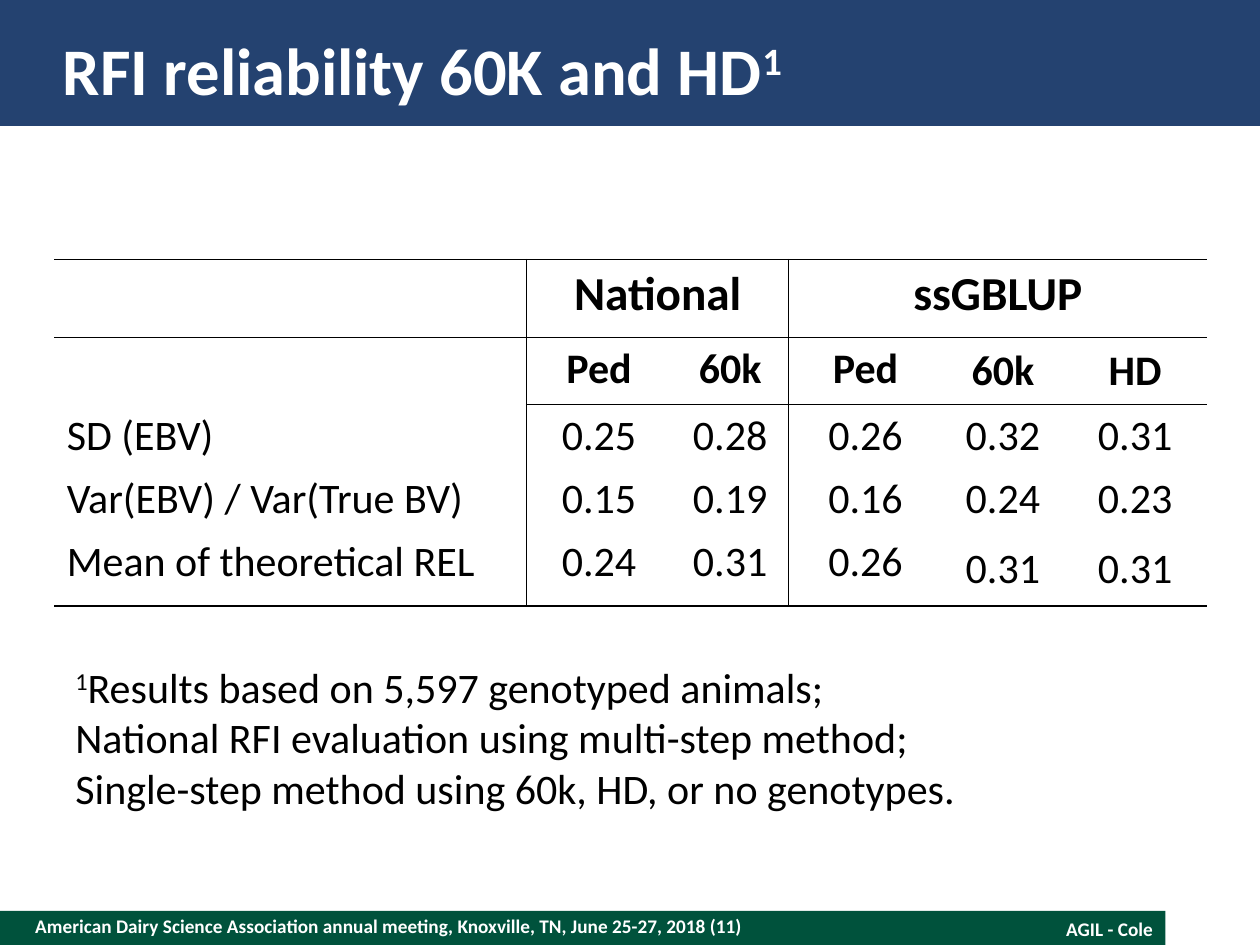
from dataclasses import dataclass

from lxml.etree import SubElement
from pptx import Presentation
from pptx.dml.color import RGBColor
from pptx.enum.shapes import MSO_SHAPE
from pptx.enum.text import MSO_ANCHOR, PP_ALIGN
from pptx.oxml.ns import qn
from pptx.util import Inches, Pt

COLUMNS, ROWS = 100, 75  # layout grid of the slide


@dataclass(frozen=True)
class Theme:
    font: str = "Calibri"
    navy: str = "244270"
    green: str = "00523C"
    white: str = "FFFFFF"
    black: str = "000000"
    title: float = 38
    group: float = 27
    body: float = 24
    footer: float = 11
    rule: float = 1


class SlideBuilder:
    def __init__(self, deck, theme):
        self.deck, self.theme = deck, theme
        self.slide = deck.slides.add_slide(deck.slide_layouts[6])

    def x(self, columns):
        return round(self.deck.slide_width * columns / COLUMNS)

    def y(self, rows):
        return round(self.deck.slide_height * rows / ROWS)

    def place(self, left, top, width, height):
        return self.x(left), self.y(top), self.x(width), self.y(height)

    def band(self, area, color):
        bar = self.slide.shapes.add_shape(MSO_SHAPE.RECTANGLE, *self.place(*area))
        bar.shadow.inherit = False
        bar.fill.solid()
        bar.fill.fore_color.rgb = RGBColor.from_string(color)
        bar.line.fill.background()

    def fill_paragraph(self, paragraph, text, size, color, bold=False,
                       align=PP_ALIGN.LEFT):
        """Fill a paragraph; text between ^ marks is superscript."""
        paragraph.alignment = align
        style = {"name": self.theme.font, "size": Pt(size), "bold": bold}
        for index, part in enumerate(text.split("^")):
            if not part:
                continue
            run = paragraph.add_run()
            run.text = part
            for name, value in style.items():
                setattr(run.font, name, value)
            run.font.color.rgb = RGBColor.from_string(color)
            if index % 2:
                run._r.get_or_add_rPr().set("baseline", "30000")

    def text(self, area, lines, size, color, frame_format=None, **style):
        frame = self.slide.shapes.add_textbox(*self.place(*area)).text_frame
        for name, value in {"word_wrap": True, **(frame_format or {})}.items():
            setattr(frame, name, value)
        for index, line in enumerate(lines):
            paragraph = frame.add_paragraph() if index else frame.paragraphs[0]
            self.fill_paragraph(paragraph, line, size, color, **style)

    def border(self, cell, edges):
        """Rule the edges that are True and clear the others."""
        properties = cell._tc.get_or_add_tcPr()
        for index, (side, ruled) in enumerate(edges.items()):
            edge = SubElement(properties, qn(f"a:ln{side}"), w=str(Pt(self.theme.rule)))
            if ruled:
                fill = SubElement(edge, qn("a:solidFill"))
                SubElement(fill, qn("a:srgbClr"), val=self.theme.black)
            else:
                SubElement(edge, qn("a:noFill"))
            properties.insert(index, edge)

    def table(self, corner, widths, heights, values, merges, style_cell, is_ruled):
        area = (*corner, sum(widths), sum(heights))
        grid = self.slide.shapes.add_table(
            len(heights), len(widths), *self.place(*area)).table
        grid.first_row = grid.horz_banding = False
        for column, width in zip(grid.columns, widths):
            column.width = self.x(width)
        for row, height in zip(grid.rows, heights):
            row.height = self.y(height)
        for row, first, last in merges:
            grid.cell(row, first).merge(grid.cell(row, last))
        for r, row_values in enumerate(values):
            for c, value in enumerate(row_values):
                cell = grid.cell(r, c)
                cell_format, text_style = style_cell(r, c)
                for name, setting in cell_format.items():
                    setattr(cell, name, setting)
                self.fill_paragraph(cell.text_frame.paragraphs[0], value,
                                    color=self.theme.black, **text_style)
                cell.fill.background()
                right = c + (cell.span_width if cell.is_merge_origin else 1)
                self.border(cell, {
                    "L": is_ruled("vertical", c, c),
                    "R": is_ruled("vertical", right, c),
                    "T": is_ruled("horizontal", r, c),
                    "B": is_ruled("horizontal", r + 1, c),
                })


RELIABILITY = [
    ["", "National", "", "ssGBLUP", "", ""],
    ["", "Ped", "60k", "Ped", "60k", "HD"],
    ["SD (EBV)", "0.25", "0.28", "0.26", "0.32", "0.31"],
    ["Var(EBV) / Var(True BV)", "0.15", "0.19", "0.16", "0.24", "0.23"],
    ["Mean of theoretical REL", "0.24", "0.31", "0.26", "0.31", "0.31"],
]
NO_MARGINS = dict.fromkeys(
    ("margin_left", "margin_top", "margin_right", "margin_bottom"), 0)
GENOTYPE_CELL = {
    **dict.fromkeys(("margin_left", "margin_top", "margin_right"), Inches(0.01)),
    "margin_bottom": 0, "vertical_anchor": MSO_ANCHOR.MIDDLE,
}


def reliability_style(row, column):
    cell_format = GENOTYPE_CELL if row and column >= 4 else {}
    return cell_format, {
        "size": Theme.body if row else Theme.group,
        "bold": row < 2,
        "align": PP_ALIGN.CENTER if column else PP_ALIGN.LEFT,
    }


def reliability_rule(direction, line, column):
    if direction == "vertical":
        return line in (1, 3)
    return line in (0, 1, 5) or (line == 2 and column > 0)


def main():
    deck = Presentation()
    deck.slide_width, deck.slide_height = Inches(10), Inches(7.5)
    theme = Theme()
    page = SlideBuilder(deck, theme)
    middle = {**NO_MARGINS, "vertical_anchor": MSO_ANCHOR.MIDDLE}

    # Footer and title bands
    page.band((0, 72.3, 92.5, 2.7), theme.green)
    page.band((0, 0, COLUMNS, 10), theme.navy)
    page.text((2.8, 72, 77, 3),
              ["American Dairy Science Association annual meeting, "
               "Knoxville, TN, June 25-27, 2018 (11)"],
              theme.footer, theme.white, middle, bold=True)
    page.text((72.5, 72.3, 20, 2.9), ["AGIL - Cole"],
              theme.footer, theme.white, bold=True, align=PP_ALIGN.RIGHT)
    page.text((5, 2, 90, 7), ["RFI reliability 60K and HD^1^"],
              theme.title, theme.white, middle, bold=True)

    # Reliability table
    page.table((4.3, 20.6), [37.5, 11.5, 9.3, 12.2, 9.6, 11.4],
               [6.2, 5.3, 4.3, 4.3, 6], RELIABILITY,
               [(0, 1, 2), (0, 3, 5)], reliability_style, reliability_rule)

    # Footnote
    page.text((5, 52, 74.7, 13.1),
              ["^1^Results based on 5,597 genotyped animals;",
               "National RFI evaluation using multi-step method;",
               "Single-step method using 60k, HD, or no genotypes."],
              theme.body, theme.black, {"word_wrap": False})

    deck.save("out.pptx")


if __name__ == "__main__":
    main()
